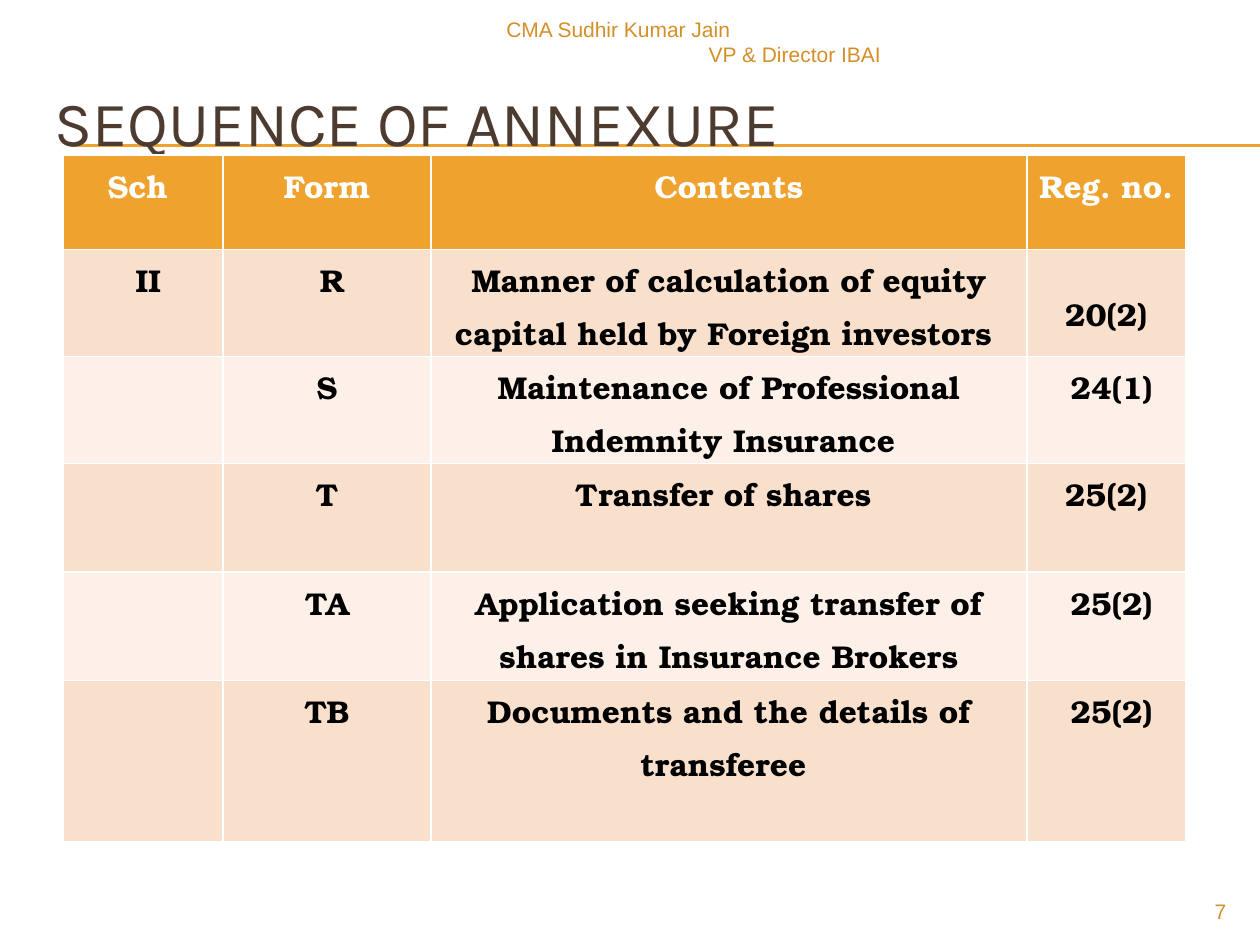
import pptx
import pptx.dml.color
import pptx.enum.text
import pptx.oxml.ns
import pptx.util
from lxml import etree
from pptx.util import Inches

RGBColor = pptx.dml.color.RGBColor
ALIGN = pptx.enum.text.PP_ALIGN
ANCHOR = pptx.enum.text.MSO_ANCHOR

ORANGE = RGBColor(0xF0, 0xA2, 0x2E)
DARK_ORANGE = RGBColor(0xD4, 0x8F, 0x29)
BROWN = RGBColor(0x4E, 0x3B, 0x30)
PEACH = RGBColor(0xF9, 0xE0, 0xCD)
PALE_PEACH = RGBColor(0xFC, 0xF0, 0xE8)
WHITE = RGBColor(0xFF, 0xFF, 0xFF)
BLACK = RGBColor(0, 0, 0)

COLUMN_WIDTHS = [1.27, 1.65, 4.73, 1.26]
ROW_HEIGHTS = [0.75, 0.85, 0.85, 0.86, 0.86, 1.28]
ANNEXURES = [
    ["Sch ", "Form", "Contents", "Reg. no."],
    [" II", " R", "Manner of calculation of equity capital held by Foreign investors ", "20(2)"],
    ["", "S", "Maintenance of Professional Indemnity Insurance ", " 24(1)"],
    ["", "T", "Transfer of shares ", "25(2)"],
    ["", "TA", "Application seeking transfer of shares in Insurance Brokers", " 25(2)"],
    ["", "TB", "Documents and the details of transferee ", " 25(2)"],
]


def write(paragraph, text, *, font="Arial", size=12, color=DARK_ORANGE,
          bold=False, align=ALIGN.RIGHT, line_spacing=1.0):
    """Put formatted text into a paragraph."""
    paragraph.text = text
    paragraph.alignment = align
    paragraph.line_spacing = line_spacing
    paragraph.font.name = font
    paragraph.font.size = pptx.util.Pt(size)
    paragraph.font.color.rgb = color
    paragraph.font.bold = bold


def add_heading(slide, left, top, width, height):
    """Place the title over a pair of thin rules that run to the slide edge."""
    for offset in (0.65, 0.66):
        rule = slide.shapes.add_connector(
            pptx.enum.shapes.MSO_CONNECTOR.STRAIGHT,
            left + Inches(0.23), top + Inches(offset), Inches(10), top + Inches(offset))
        rule.line.color.rgb = ORANGE
        rule.line.width = pptx.util.Pt(0.75)
        etree.SubElement(rule.element.spPr, pptx.oxml.ns.qn("a:effectLst"))
    title = slide.shapes.title
    title.left, title.top, title.width, title.height = left, top, width, height
    title.text_frame.auto_size = pptx.enum.text.MSO_AUTO_SIZE.NONE
    title.text_frame.vertical_anchor = ANCHOR.MIDDLE
    write(title.text_frame.paragraphs[0], "SEQUENCE OF ANNEXURE",
          font="Karla", size=36, color=BROWN, align=ALIGN.LEFT)
    title.element.getparent().append(title.element)


def add_annexure_table(slide, left, top):
    """Place the table of annexures with an orange header and banded rows."""
    annexures = slide.shapes.add_table(
        len(ROW_HEIGHTS), len(COLUMN_WIDTHS), left, top,
        Inches(sum(COLUMN_WIDTHS)), Inches(sum(ROW_HEIGHTS))).table
    for column, width in zip(annexures.columns, COLUMN_WIDTHS):
        column.width = Inches(width)
    for index, (row, height, entries) in enumerate(
            zip(annexures.rows, ROW_HEIGHTS, ANNEXURES)):
        row.height = Inches(height)
        band = ORANGE if index == 0 else PEACH if index % 2 else PALE_PEACH
        for cell, entry in zip(row.cells, entries):
            cell.fill.solid()
            cell.fill.fore_color.rgb = band
            cell.margin_left = cell.margin_right = Inches(0.07)
            cell.margin_top = cell.margin_bottom = 0
            write(cell.text_frame.paragraphs[0], entry, font="TeX Gyre Bonum",
                  size=18, color=BLACK if index else WHITE, bold=True,
                  align=ALIGN.CENTER, line_spacing=1.15)
    annexures.cell(1, 3).margin_top = Inches(0.27)


def add_label(slide, left, top, width, height, lines):
    """Place a small text box with one paragraph for each (text, alignment)."""
    frame = slide.shapes.add_textbox(left, top, width, height).text_frame
    frame.word_wrap = True
    for index, (text, align) in enumerate(lines):
        paragraph = frame.add_paragraph() if index else frame.paragraphs[0]
        write(paragraph, text, align=align)


def main():
    """Build and save the slide."""
    deck = pptx.Presentation()
    deck.slide_width, deck.slide_height = Inches(10), Inches(7.5)
    slide = deck.slides.add_slide(deck.slide_layouts[5])
    add_heading(slide, Inches(0.33), Inches(0.5), Inches(9.5), Inches(0.92))
    add_annexure_table(slide, Inches(0.5), Inches(1.23))
    add_label(slide, Inches(3.92), Inches(0.08), Inches(3.17), Inches(0.32),
              [("CMA Sudhir Kumar Jain", ALIGN.LEFT),
               ("VP & Director IBAI", ALIGN.RIGHT)])
    add_label(slide, Inches(9), Inches(7.08), Inches(0.83), Inches(0.27),
              [("7", ALIGN.RIGHT)])
    deck.save("out.pptx")


if __name__ == "__main__":
    main()
